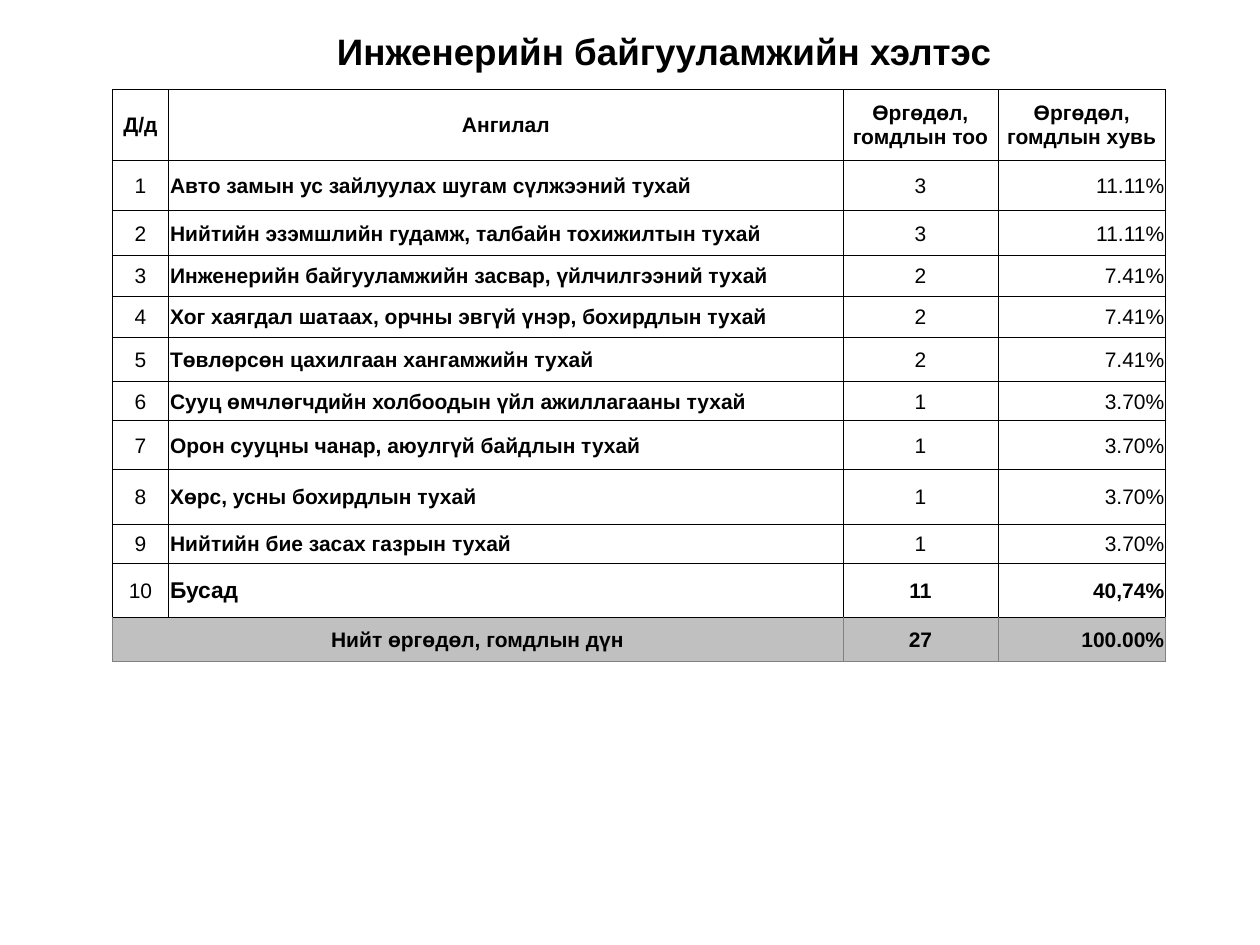
from pptx import Presentation
from pptx.dml.color import RGBColor
from pptx.enum import text
from pptx.oxml import parse_xml
from pptx.oxml.ns import nsdecls
from pptx.util import Inches, Pt

BLACK = RGBColor(0x00, 0x00, 0x00)
WHITE = RGBColor(0xFF, 0xFF, 0xFF)
SILVER = RGBColor(0xC0, 0xC0, 0xC0)
GRAY = RGBColor(0x80, 0x80, 0x80)
FONT = "Arial"
LEFT, CENTER, RIGHT, JUSTIFY = (
    text.PP_ALIGN.LEFT, text.PP_ALIGN.CENTER, text.PP_ALIGN.RIGHT, text.PP_ALIGN.JUSTIFY)

HEADINGS = ("Д/д", "Ангилал", "Өргөдөл, гомдлын тоо", "Өргөдөл, гомдлын хувь")
CATEGORIES = [
    ("Авто замын ус зайлуулах шугам сүлжээний тухай", "3", "11.11%"),
    ("Нийтийн эзэмшлийн гудамж, талбайн тохижилтын тухай", "3", "11.11%"),
    ("Инженерийн байгууламжийн засвар, үйлчилгээний тухай", "2", "7.41%"),
    ("Хог хаягдал шатаах, орчны эвгүй үнэр, бохирдлын тухай", "2", "7.41%"),
    ("Төвлөрсөн цахилгаан хангамжийн тухай", "2", "7.41%"),
    ("Сууц өмчлөгчдийн холбоодын үйл ажиллагааны тухай", "1", "3.70%"),
    ("Орон сууцны чанар, аюулгүй байдлын тухай", "1", "3.70%"),
    ("Хөрс, усны бохирдлын тухай", "1", "3.70%"),
    ("Нийтийн бие засах газрын тухай", "1", "3.70%"),
    ("Бусад", "11", "40,74%"),
]
TOTAL = ("Нийт өргөдөл, гомдлын дүн", "", "27", "100.00%")
COLUMN_WIDTHS = (0.45, 5.35, 1.23, 1.33)
ROW_HEIGHTS = (0.56, 0.4, 0.36, 0.32, 0.33, 0.35, 0.31, 0.39, 0.43, 0.31, 0.43, 0.35)


def style_paragraph(paragraph, size, bold, align):
    paragraph.alignment = align
    font = paragraph.font
    font.name, font.size, font.bold = FONT, Pt(size), bold
    font.color.rgb = BLACK


def set_borders(cell, color, top_color):
    properties = cell._tc.get_or_add_tcPr()
    sides = {"lnL": color, "lnR": color, "lnT": top_color, "lnB": color}
    for position, (side, side_color) in enumerate(sides.items()):
        properties.insert(position, parse_xml(
            f'<a:{side} {nsdecls("a")} w="{Pt(0.5)}"><a:solidFill>'
            f'<a:srgbClr val="{side_color}"/></a:solidFill></a:{side}>'))


def fill_cell(cell, words, size, bold, align, fill, border):
    cell.margin_left = cell.margin_top = cell.margin_right = Inches(0.01)
    cell.margin_bottom = 0
    cell.vertical_anchor = text.MSO_ANCHOR.MIDDLE
    cell.text = words
    style_paragraph(cell.text_frame.paragraphs[0], size, bold, align)
    cell.fill.solid()
    cell.fill.fore_color.rgb = fill
    set_borders(cell, border, BLACK)


def add_title(slide, left, top, width, height):
    frame = slide.shapes.add_textbox(left, top, width, height).text_frame
    frame.word_wrap = True
    frame.margin_left = Inches(0.5)
    frame.vertical_anchor = text.MSO_ANCHOR.MIDDLE
    heading = frame.paragraphs[0]
    heading.text = "Инженерийн байгууламжийн хэлтэс"
    heading.line_spacing = 0.9
    style_paragraph(heading, 21, True, CENTER)


def add_complaints_table(slide, left, top, width, height):
    rows = [HEADINGS]
    rows += [(str(number), *category) for number, category in enumerate(CATEGORIES, 1)]
    rows.append(TOTAL)
    last, other = len(rows) - 1, len(rows) - 2
    table = slide.shapes.add_table(len(rows), len(HEADINGS), left, top, width, height).table
    table.first_row = table.horz_banding = False
    for column, column_width in zip(table.columns, COLUMN_WIDTHS):
        column.width = Inches(column_width)
    for row, row_height in zip(table.rows, ROW_HEIGHTS):
        row.height = Inches(row_height)

    for r, row in enumerate(rows):
        is_total = r == last
        for c, words in enumerate(row):
            align = (CENTER, LEFT, CENTER, RIGHT)[c]
            if r == 0:
                align = CENTER
            elif (r, c) == (other, 1):
                align = JUSTIFY
            bold = r in (0, last) or c == 1 or (r == other and c > 1)
            size = 13 if (r, c) == (other, 1) else 12
            fill_cell(table.cell(r, c), words, size, bold, align,
                      SILVER if is_total else WHITE, GRAY if is_total else BLACK)
    table.cell(last, 0).merge(table.cell(last, 1))


def main():
    deck = Presentation()
    deck.slide_width, deck.slide_height = Inches(10), Inches(7.5)
    slide = deck.slides.add_slide(deck.slide_layouts[6])
    left, width = Inches(0.89), Inches(8.36)
    add_title(slide, left, Inches(0.14), width, Inches(0.57))
    add_complaints_table(slide, left, Inches(0.71), width, Inches(4.53))
    deck.save("out.pptx")


if __name__ == "__main__":
    main()
